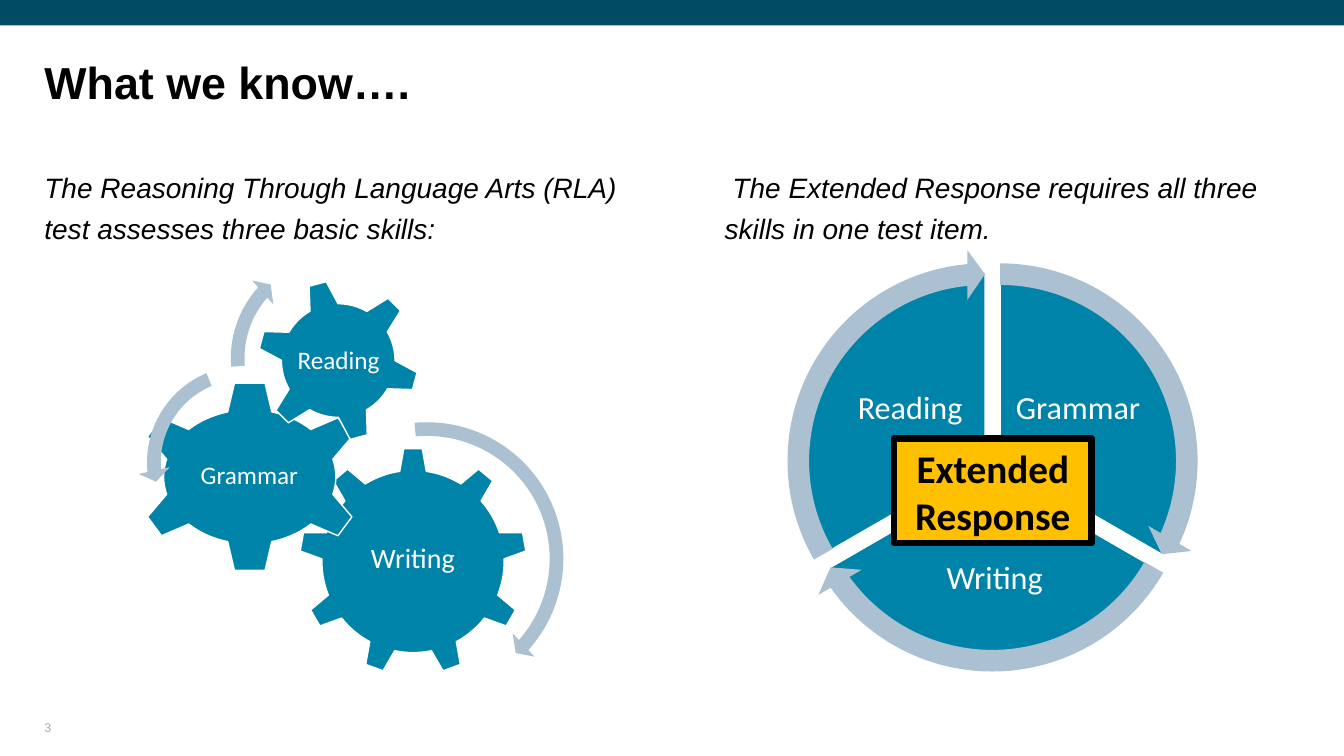
from pptx import Presentation
from pptx.dml.color import RGBColor
from pptx.enum.shapes import MSO_SHAPE as SHAPE
from pptx.enum.text import MSO_ANCHOR as ANCHOR, PP_ALIGN as ALIGN
from pptx.util import Cm, Pt

COLORS = {
    "bar": "014B64", "teal": "0083A9", "arrow": "ABC1D1", "gold": "FFC000",
    "black": "000000", "white": "FFFFFF", "gray": "AFABAB",
}

prs = Presentation()
prs.slide_width, prs.slide_height = Cm(33.87), Cm(19.05)
s = prs.slides.add_slide(prs.slide_layouts[6])


def add_shape(kind, x, y, w, h, fill, line=None, line_width=1, adj=()):
    sp = s.shapes.add_shape(kind, Cm(x), Cm(y), Cm(w), Cm(h))
    sp.shadow.inherit = False
    sp.fill.solid()
    sp.fill.fore_color.rgb = RGBColor.from_string(COLORS[fill])
    if line:
        sp.line.color.rgb = RGBColor.from_string(COLORS[line])
        sp.line.width = Pt(line_width)
    else:
        sp.line.fill.background()
    for i, value in enumerate(adj):
        sp.adjustments[i] = value
    return sp


def add_text(text, x, y, w, h, size, font="Arial", color="black", bold=False,
             italic=False, align=ALIGN.LEFT, anchor=ANCHOR.TOP, spacing=0.9, before=8):
    tb = s.shapes.add_textbox(Cm(x), Cm(y), Cm(w), Cm(h))
    tf = tb.text_frame
    tf.word_wrap = True
    tf.vertical_anchor = anchor
    tf.margin_left = tf.margin_right = tf.margin_top = tf.margin_bottom = 0
    for i, line in enumerate(text.split("\n")):
        p = tf.paragraphs[0] if i == 0 else tf.add_paragraph()
        p.alignment, p.line_spacing = align, spacing
        if i:
            p.space_before = Pt(before)
        r = p.add_run()
        r.text = line
        r.font.name, r.font.size = font, Pt(size)
        r.font.bold, r.font.italic = bold, italic
        r.font.color.rgb = RGBColor.from_string(COLORS[color])
    return tb


# Top bar, title and slide number
add_shape(SHAPE.RECTANGLE, 0, 0, 33.87, 0.64, "bar")
add_text("What we know….", 1.12, 0.7, 31.3, 2.04, 32, bold=True, anchor=ANCHOR.BOTTOM)
add_text("3", 1.12, 17.91, 7.62, 0.61, 9, color="gray", anchor=ANCHOR.BOTTOM, spacing=1)

# Introductions to the two diagrams
add_text("The Reasoning Through Language Arts (RLA)\ntest assesses three basic skills:",
         1.12, 4.39, 16, 2.3, 20, italic=True)
requires = add_text("The Extended Response requires all three\nskills in one test item.",
                    18.26, 4.39, 15, 2.3, 20, italic=True)
requires.text_frame.paragraphs[0]._p.get_or_add_pPr().set("indent", str(Cm(0.2)))

# Gears: kind, box, rotation, label, label box, label size
label = dict(font="Calibri", color="white", align=ALIGN.CENTER, anchor=ANCHOR.MIDDLE)
gears = [
    (SHAPE.GEAR_9, (7.54, 11.28, 5.74, 5.74), 0, "Writing", (8.69, 12.62, 3.43, 2.95), 20),
    (SHAPE.GEAR_6, (3.4, 9.6, 5.79, 4.83), 0, "Grammar", (4.75, 10.82, 3.07, 2.39), 18),
    (SHAPE.GEAR_6, (6.48, 7.04, 4.09, 4.09), 345, "Reading", (7.39, 7.95, 2.29, 2.29), 18),
]
for kind, box, rotation, skill, label_box, size in gears:
    gear = add_shape(kind, *box, "teal", "white")
    gear.rotation = rotation
    add_text(skill, *label_box, size, **label)

# Turning arrows around the gears
turns = [
    (SHAPE.CIRCULAR_ARROW, 7.09, 10.41, 7.34, (0.047, 2.99, 25.047, 158.862, 0.055)),
    (SHAPE.LEFT_CIRCULAR_ARROW, 3.48, 8.99, 5.33, (0.065, 4.3, 104.891, 148.378, 0.075)),
    (SHAPE.CIRCULAR_ARROW, 5.59, 6.15, 5.74, (0.06, 3.941, 133.138, 105.082, 0.07)),
]
for kind, x, y, size, adj in turns:
    add_shape(kind, x, y, size, size, "arrow", adj=adj)

# Cycle: label, sector position, start and end angle, label box
PIE, RIM, HEAD = 9.47, 0.6, 3.275
sectors = [
    ("Grammar", 20.47, 6.88, 162, 18, (25.48, 8.89, 3.38, 2.82)),
    ("Writing", 20.27, 7.21, 18, 90, (22.53, 13.36, 5.08, 2.49)),
    ("Reading", 20.09, 6.88, 90, 162, (21.25, 8.89, 3.38, 2.82)),
]
for skill, x, y, start, end, label_box in sectors:
    add_shape(SHAPE.PIE, x, y, PIE, PIE, "teal", "white", adj=(start, end))
    add_text(skill, *label_box, 23, **label)
for skill, x, y, start, end, label_box in sectors:
    add_shape(SHAPE.CIRCULAR_ARROW, x - RIM, y - RIM, PIE + 2 * RIM, PIE + 2 * RIM, "arrow",
              adj=(0.051, HEAD, end - HEAD, start, 0.059))

# Extended Response in the centre
center = (22.53, 11.05, 4.98, 2.64)
add_shape(SHAPE.RECTANGLE, *center, "gold", "black", 4.5)
add_text("Extended\nResponse", *center, 28, font="Calibri", bold=True, spacing=1, before=0,
         align=ALIGN.CENTER, anchor=ANCHOR.MIDDLE)

prs.save("out.pptx")
